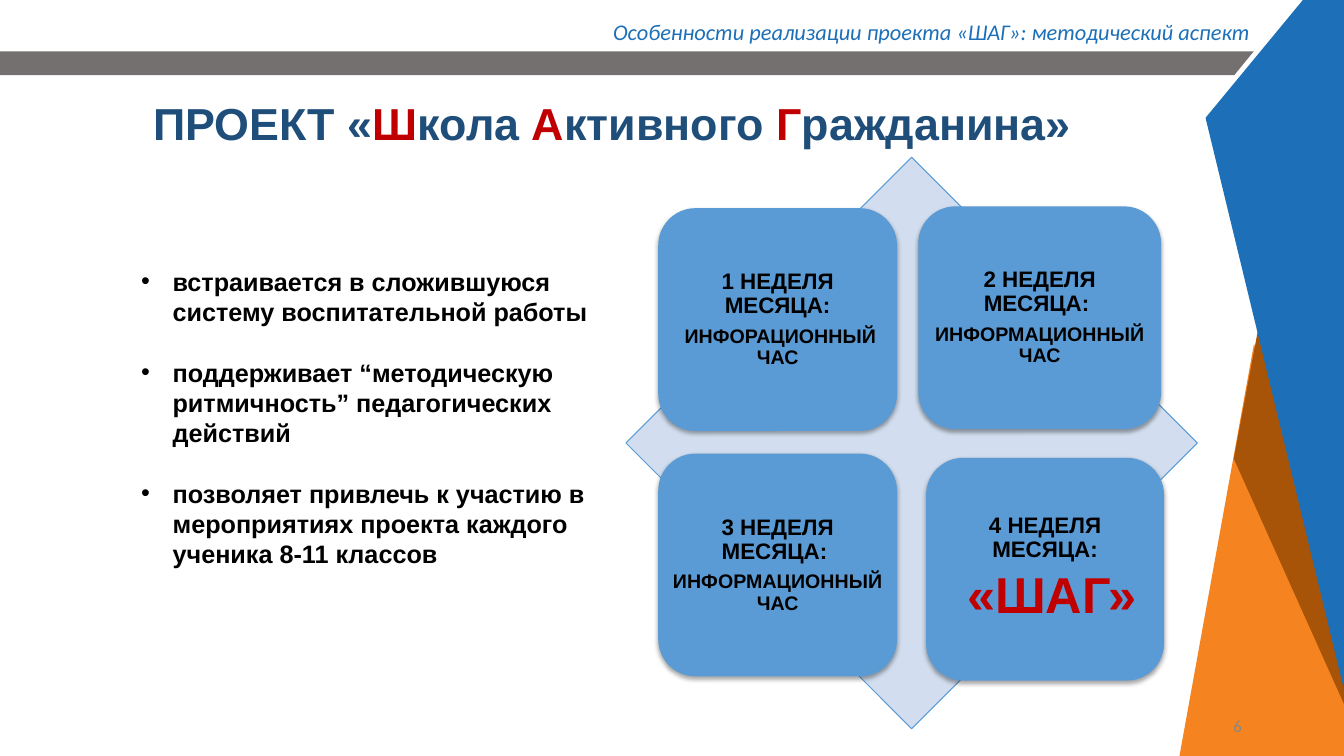
"""Build the school project slide with its four-week diagram."""
from dataclasses import dataclass

from lxml.etree import SubElement
from pptx import Presentation
from pptx.dml.color import RGBColor as RGB
from pptx.enum.shapes import MSO_SHAPE as SHAPE
from pptx.enum.text import MSO_ANCHOR as ANCHOR, MSO_AUTO_SIZE as AUTO, PP_ALIGN as ALIGN
from pptx.oxml.ns import qn
from pptx.util import Pt


@dataclass(frozen=True)
class Theme:
    """Colours, fonts and type sizes."""
    blue: str = "1D70B8"
    navy: str = "1E4E79"
    red: str = "C00000"
    orange: str = "F5831F"
    brown: str = "A85408"
    grey: str = "757070"
    page_grey: str = "888888"
    card: str = "5B9BD5"
    pale: str = "D2DEEF"
    white: str = "FFFFFF"
    black: str = "000000"
    text_font: str = "Arial"
    note_font: str = "Calibri"
    title: int = 32
    body: int = 18
    week: int = 16
    hour: int = 14
    accent: int = 36
    note: int = 16
    page: int = 12


class SlideMaker:
    """Holds the theme and the slide and draws each kind of element."""

    def __init__(self, slide, theme):
        """Keep the slide and its theme."""
        self.s = slide
        self.t = theme

    def paint(self, sp, fill, line=None):
        """Set a flat fill and an optional outline."""
        sp.shadow.inherit = False
        sp.fill.solid()
        sp.fill.fore_color.rgb = RGB.from_string(fill)
        if line:
            sp.line.color.rgb = RGB.from_string(line)
            sp.line.width = Pt(0.75)
        else:
            sp.line.fill.background()

    def run(self, p, text, color, **fmt):
        """Add a formatted run to a paragraph."""
        r = p.add_run()
        r.text = text
        for name, value in fmt.items():
            setattr(r.font, name, value)
        r.font.color.rgb = RGB.from_string(color)

    def frame(self, sp, anchor, inset=None):
        """Prepare a text frame and return it."""
        tf = sp.text_frame
        fmt = {"word_wrap": True, "auto_size": AUTO.NONE, "vertical_anchor": anchor}
        if inset is not None:
            sides = ("left", "top", "right", "bottom")
            fmt.update({f"margin_{side}": Pt(inset) for side in sides})
        for name, value in fmt.items():
            setattr(tf, name, value)
        return tf

    def place(self, sp, box):
        """Move a placeholder to a box."""
        for name, value in zip(("left", "top", "width", "height"), box):
            setattr(sp, name, Pt(value))

    def polygon(self, points, fill):
        """Draw a closed outline."""
        pts = [(Pt(x), Pt(y)) for x, y in points]
        fb = self.s.shapes.build_freeform(*pts[0], scale=1.0)
        fb.add_line_segments(pts[1:], close=True)
        self.paint(fb.convert_to_shape(), fill)

    def preset(self, kind, box, fill, line=None):
        """Draw a preset shape and return it."""
        sp = self.s.shapes.add_shape(kind, *map(Pt, box))
        self.paint(sp, fill, line)
        return sp

    def note(self, text, box, anchor, color, size, **fmt):
        """Add a right-aligned line of small text."""
        sp = self.s.shapes.add_textbox(*map(Pt, box))
        p = self.frame(sp, anchor).paragraphs[0]
        p.alignment = ALIGN.RIGHT
        self.run(p, text, color, size=Pt(size), name=self.t.note_font, **fmt)

    def title(self, parts, box):
        """Fill the title, colouring every second part red."""
        sp = self.s.shapes.title
        self.place(sp, box)
        p = self.frame(sp, ANCHOR.MIDDLE).paragraphs[0]
        p.alignment, p.line_spacing = ALIGN.LEFT, 0.9
        for i, part in enumerate(parts):
            color = self.t.red if i % 2 else self.t.navy
            self.run(p, part, color, size=Pt(self.t.title), name=self.t.text_font, bold=True)

    def bullets(self, items, box):
        """Fill the body placeholder with a bulleted list."""
        sp = self.s.placeholders[1]
        self.place(sp, box)
        tf = self.frame(sp, ANCHOR.TOP)
        for i, item in enumerate(items):
            p = tf.add_paragraph() if i else tf.paragraphs[0]
            pPr = p._p.get_or_add_pPr()
            pPr.set("marL", str(Pt(22.5)))
            pPr.set("indent", str(-Pt(22.5)))
            p.space_before = Pt(21.6 if i else 0)
            self.run(p, item, self.t.black, size=Pt(self.t.body), name=self.t.text_font, bold=True)

    def soft_shadow(self, sp):
        """Give a shape a soft shadow below it."""
        effects = sp._element.spPr.find(qn("a:effectLst"))
        shadow = SubElement(effects, qn("a:outerShdw"), blurRad=str(Pt(3.1)),
                            dist=str(Pt(1.8)), dir="5400000", rotWithShape="0")
        color = SubElement(shadow, qn("a:srgbClr"), val=self.t.black)
        SubElement(color, qn("a:alpha"), val="35000")

    def card(self, box, week, event, size, color, inset):
        """Draw one week of the month."""
        sp = self.preset(SHAPE.ROUNDED_RECTANGLE, box, self.t.card)
        self.soft_shadow(sp)
        tf = self.frame(sp, ANCHOR.MIDDLE, inset)
        lines = ((week, self.t.week, self.t.black), (event, size, color))
        for i, (text, pt, rgb) in enumerate(lines):
            p = tf.add_paragraph() if i else tf.paragraphs[0]
            p.alignment, p.line_spacing, p.space_after = ALIGN.CENTER, 0.9, Pt(5.6)
            self.run(p, text, rgb, size=Pt(pt), name=self.t.text_font, bold=True)


def main():
    """Build and save the slide."""
    prs = Presentation()
    prs.slide_width, prs.slide_height = Pt(960), Pt(540)
    t = Theme()
    m = SlideMaker(prs.slides.add_slide(prs.slide_layouts[1]), t)

    m.polygon([(0, 36.7), (933, 36.7), (914.4, 53.6), (0, 53.6)], t.grey)
    m.note("Особенности реализации проекта «ШАГ»: методический аспект",
           (111.6, 9.4, 788.4, 26.6), ANCHOR.TOP, t.blue, t.note, italic=True)
    m.polygon([(942.5, -13), (974, -12.5), (974, 540), (842.4, 540.5)], t.orange)
    m.polygon([(974, -13), (974, 536.4), (966.2, 536.4), (856.8, 84.2), (936, -12.5)], t.white)
    m.preset(SHAPE.RECTANGLE, (933, 440, 45.4, 100.8), t.orange)
    m.polygon([(881.3, 327.6), (907.9, 186.5), (989.3, 568)], t.brown)
    m.polygon([(974, -13), (974, 536.4), (970.6, 536.4), (861.1, 84.2), (941, -12.5)], t.blue)

    m.title(["ПРОЕКТ «", "Ш", "кола ", "А", "ктивного ", "Г", "ражданина»"],
            (102.2, 53.3, 752.4, 73.4))
    m.note("6", (678.2, 504, 216, 28.8), ANCHOR.MIDDLE, t.page_grey, t.page)
    m.bullets(["встраивается в сложившуюся систему воспитательной работы",
               "поддерживает “методическую ритмичность” педагогических действий",
               "позволяет привлечь к участию в мероприятиях проекта каждого ученика 8-11 классов"],
              (93.6, 186.5, 363.6, 225.4))

    m.preset(SHAPE.DIAMOND, (447.1, 112.3, 408.2, 408.2), t.pale, t.card)
    hour = (t.hour, t.black, 0)
    weeks = [
        ((470.2, 148.7, 170.6), "1 НЕДЕЛЯ МЕСЯЦА:", " ИНФОРАЦИОННЫЙ ЧАС", *hour),
        ((655.9, 147.4, 173.5), "2 НЕДЕЛЯ МЕСЯЦА: ", "ИНФОРМАЦИОННЫЙ ЧАС", *hour),
        ((470.2, 324, 170.6), "3 НЕДЕЛЯ МЕСЯЦА: ", "ИНФОРМАЦИОННЫЙ ЧАС", *hour),
        ((661.5, 327, 170), "4 НЕДЕЛЯ МЕСЯЦА:", " «ШАГ»", t.accent, t.red, 5),
    ]
    for box, *content in weeks:
        m.card((*box, 159.2), *content)

    prs.save("out.pptx")


if __name__ == "__main__":
    main()
